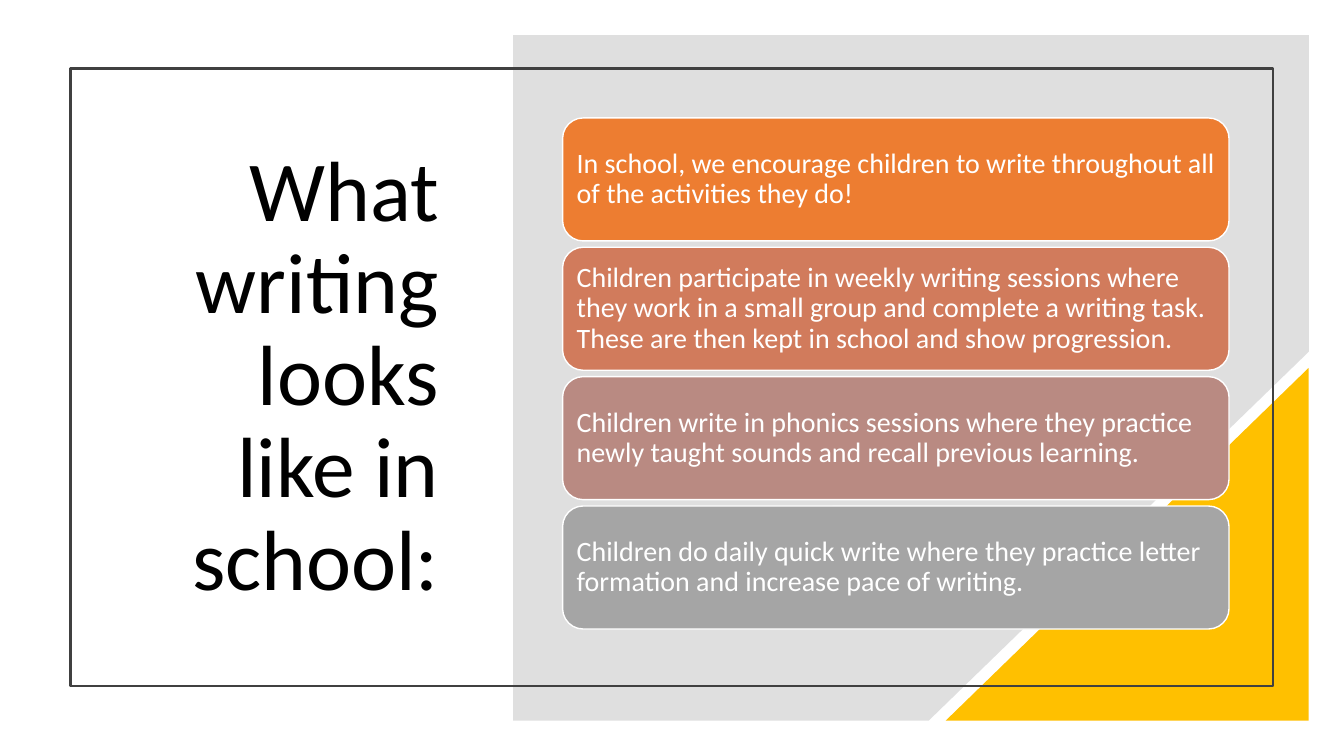
import pptx
import pptx.dml.color
import pptx.enum.shapes
import pptx.enum.text
import pptx.util
import lxml.etree

Inches = pptx.util.Inches
Pt = pptx.util.Pt
RGB = pptx.dml.color.RGBColor.from_string
SHAPE = pptx.enum.shapes.MSO_SHAPE
ALIGN = pptx.enum.text.PP_ALIGN
ANCHOR = pptx.enum.text.MSO_ANCHOR

COLORS = {
    "title": "000000",
    "panel": "808080",
    "corner": "FFC000",
    "frame": "404040",
    "white": "FFFFFF",
}
TITLE = "What writing looks like in school:"
CARDS = [
    ("ED7D31", "In school, we encourage children to write throughout all of the activities they do!"),
    ("D17B5C", "Children participate in weekly writing sessions where they work in a small group "
               "and complete a writing task. These are then kept in school and show progression."),
    ("B98A82", "Children write in phonics sessions where they practice newly taught sounds "
               "and recall previous learning."),
    ("A5A5A5", "Children do daily quick write where they practice letter formation "
               "and increase pace of writing."),
]


def set_attrs(obj, values):
    for name, value in values.items():
        setattr(obj, name, value)


def paint(sp, fill=None, line=None, width=1):
    sp.shadow.inherit = False
    if fill:
        sp.fill.solid()
        sp.fill.fore_color.rgb = RGB(fill)
    else:
        sp.fill.background()
    if line:
        sp.line.color.rgb = RGB(line)
        sp.line.width = Pt(width)
    else:
        sp.line.fill.background()


def write(sp, text, size, color, align, inset_x, inset_y):
    tf = sp.text_frame
    set_attrs(tf, {
        "word_wrap": True,
        "vertical_anchor": ANCHOR.MIDDLE,
        "margin_left": Inches(inset_x),
        "margin_right": Inches(inset_x),
        "margin_top": Inches(inset_y),
        "margin_bottom": Inches(inset_y),
    })
    p = tf.paragraphs[0]
    set_attrs(p, {"alignment": align, "line_spacing": 0.9})
    r = p.add_run()
    r.text = text
    set_attrs(r.font, {"name": "Calibri", "size": Pt(size)})
    r.font.color.rgb = RGB(color)


def add_title(s, x, y, w, h):
    sp = s.shapes.add_textbox(Inches(x), Inches(y), Inches(w), Inches(h))
    write(sp, TITLE, 61, COLORS["title"], ALIGN.RIGHT, 0.1, 0.05)


def add_backdrop(s, x, y, w, h):
    right, bottom = x + w, y + h
    points = [(right, y), (right, y + 3.14), (x + 4.12, bottom), (x, bottom)]
    builder = s.shapes.build_freeform(Inches(x), Inches(y))
    builder.add_line_segments([(Inches(px), Inches(py)) for px, py in points])
    panel = builder.convert_to_shape()
    paint(panel, COLORS["panel"])
    color = panel.fill._xPr.solidFill[0]
    lxml.etree.SubElement(color, pptx.oxml.ns.qn("a:alpha"), val="25000")

    tri_w, tri_h = 3.6, 3.5
    corner = s.shapes.add_shape(SHAPE.RIGHT_TRIANGLE, Inches(right - tri_w),
                                Inches(bottom - tri_h), Inches(tri_w), Inches(tri_h))
    paint(corner, COLORS["corner"])
    corner.element.spPr.xfrm.set("flipH", "1")


def add_frame(s, x, y, w, h):
    sp = s.shapes.add_shape(SHAPE.RECTANGLE, Inches(x), Inches(y), Inches(w), Inches(h))
    paint(sp, line=COLORS["frame"], width=1.5)


def add_cards(s, x, y, w, h):
    card_h = 1.22
    step = (h - card_h) / (len(CARDS) - 1)
    for i, (fill, text) in enumerate(CARDS):
        sp = s.shapes.add_shape(SHAPE.ROUNDED_RECTANGLE, Inches(x), Inches(y + i * step),
                                Inches(w), Inches(card_h))
        paint(sp, fill, COLORS["white"])
        write(sp, text, 20, COLORS["white"], ALIGN.LEFT, 0.08, 0.08)


def main():
    prs = pptx.Presentation()
    set_attrs(prs, {"slide_width": Inches(13.33), "slide_height": Inches(7.5)})
    s = prs.slides.add_slide(prs.slide_layouts[6])
    add_title(s, 1.1, 1.3, 3.35, 4.9)
    add_backdrop(s, 5.09, 0.35, 7.89, 6.8)
    add_frame(s, 0.7, 0.68, 11.93, 6.13)
    add_cards(s, 5.58, 1.17, 6.61, 5.07)
    prs.save("out.pptx")


if __name__ == "__main__":
    main()
